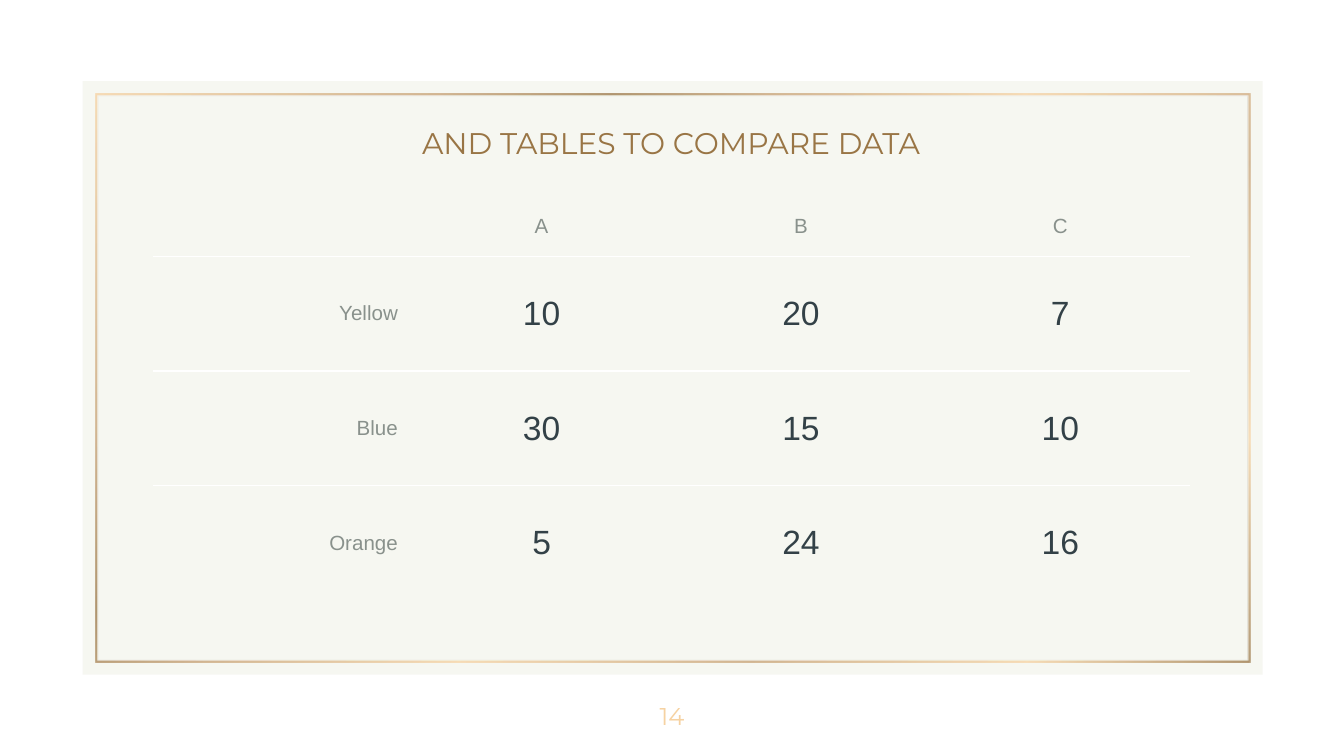
from dataclasses import dataclass

from lxml import etree
from pptx import Presentation
from pptx.dml.color import RGBColor
from pptx.enum import shapes, text
from pptx.oxml import ns
from pptx.util import Pt

PX = 9525  # EMU in one px, 96 px to the inch
MID = text.PP_ALIGN.CENTER


@dataclass(frozen=True)
class Theme:
    panel: str = "F5F6F0"
    gold: str = "F6D2A2"
    tan: str = "C59F72"
    bronze: str = "997545"
    grey: str = "89918C"
    ink: str = "334147"
    rule: str = "FFFFFF"
    head: str = "Montserrat"
    body: str = "Arial"
    title: int = 16
    label: int = 11
    value: int = 18
    page: int = 13


T = Theme()
ROWS = [
    ["", "A", "B", "C"],
    ["Yellow", "10", "20", "7"],
    ["Blue", "30", "15", "10"],
    ["Orange", "5", "24", "16"],
]


def emu(*nums):
    return [n * PX for n in nums]


def node(up, tag, **attrs):
    return etree.SubElement(up, ns.qn(tag), {k: str(v) for k, v in attrs.items()})


def tint(up, color, alpha=100):
    clr = node(node(up, "a:solidFill"), "a:srgbClr", val=color)
    if alpha < 100:
        node(clr, "a:alpha", val=alpha * 1000)


def write(frame, words, font, size, color, align=MID):
    para = frame.paragraphs[0]
    para.alignment = align
    run = para.add_run()
    run.text = words
    run.font.name = font
    run.font.size = Pt(size)
    run.font.color.rgb = RGBColor.from_string(color)
    return para


def label(slide, box, words, size, color):
    frame = slide.shapes.add_textbox(*emu(*box)).text_frame
    frame.word_wrap = True
    frame.vertical_anchor = text.MSO_ANCHOR.MIDDLE
    frame.margin_left = frame.margin_right = 0
    frame.margin_top = frame.margin_bottom = 0
    return write(frame, words, T.head, size, color)


def panel(slide, box):
    x, y, w, h = box
    kinds = shapes.MSO_SHAPE

    # Pale, slightly clear backdrop
    back = slide.shapes.add_shape(kinds.RECTANGLE, *emu(*box))
    # Thin gold frame inside it
    pad = 9
    rim = slide.shapes.add_shape(
        kinds.FRAME, *emu(x + pad, y + pad, w - 2 * pad, h - 2 * pad))
    rim.adjustments[0] = 0.004
    for shape in (back, rim):
        shape.shadow.inherit = False
        shape.line.fill.background()
    back.fill.solid()
    back.fill.fore_color.rgb = RGBColor.from_string(T.panel)
    clr = back.fill._xPr.find(".//" + ns.qn("a:srgbClr"))
    node(clr, "a:alpha", val=87000)

    # Metallic gradient
    grad = etree.Element(ns.qn("a:gradFill"), rotWithShape="1")
    stops = node(grad, "a:gsLst")
    cycle = (T.gold, T.tan, T.bronze, T.tan)
    for i, pos in enumerate((0, 20, 30, 39, 54, 71, 87, 100)):
        color = T.bronze if pos == 100 else (T.gold if pos == 87 else cycle[i % 4])
        clr = node(node(stops, "a:gs", pos=pos * 1000), "a:srgbClr", val=color)
        node(clr, "a:alpha", val=80000)
    node(grad, "a:lin", ang=45 * 60000, scaled=0)
    rim._element.spPr.find(ns.qn("a:prstGeom")).addnext(grad)


def edge(cell, under, over):
    """Draw white rules above and below a cell, and none at its sides."""
    props = cell._tc.get_or_add_tcPr()
    shown = {"a:lnL": False, "a:lnR": False, "a:lnT": over, "a:lnB": under}
    for i, (tag, on) in enumerate(shown.items()):
        line = etree.Element(ns.qn(tag), w=str(Pt(0.75)))
        if on:
            tint(line, T.rule)
        else:
            node(line, "a:noFill")
        props.insert(i, line)


def grid(slide, box, top):
    x, y, w, h = box
    last = len(ROWS) - 1
    table = slide.shapes.add_table(len(ROWS), len(ROWS[0]), *emu(*box)).table
    table.first_row = table.horz_banding = False
    for col in table.columns:
        col.width = w * PX // len(ROWS[0])
    for r, row in enumerate(table.rows):
        row.height = (top if r == 0 else (h - top) // last) * PX

    # Grey labels along the edges, dark values within
    for r, words in enumerate(ROWS):
        for c, word in enumerate(words):
            cell = table.cell(r, c)
            cell.fill.background()
            edge(cell, under=r < last, over=r > 0)
            cell.vertical_anchor = text.MSO_ANCHOR.MIDDLE
            cell.margin_left = cell.margin_right = 10 * PX
            cell.margin_top = cell.margin_bottom = 7 * PX
            if not word:
                cell.text_frame.paragraphs[0].font.size = Pt(T.label)
                continue
            size, color = (T.value, T.ink) if r and c else (T.label, T.grey)
            align = MID if c else text.PP_ALIGN.RIGHT
            write(cell.text_frame, word, T.body, size, color, align)


def main():
    deck = Presentation()
    deck.slide_width, deck.slide_height = emu(960, 540)
    slide = deck.slides.add_slide(deck.slide_layouts[6])

    panel(slide, (59, 58, 843, 424))
    title = label(slide, (109, 67, 741, 73),
                  "AND TABLES TO COMPARE DATA", T.title, T.bronze)
    title.line_spacing = 0.9
    grid(slide, (109, 141, 741, 288), top=42)
    label(slide, (451, 482, 58, 58), "14", T.page, T.gold)  # Page number

    deck.save("out.pptx")


if __name__ == "__main__":
    main()
